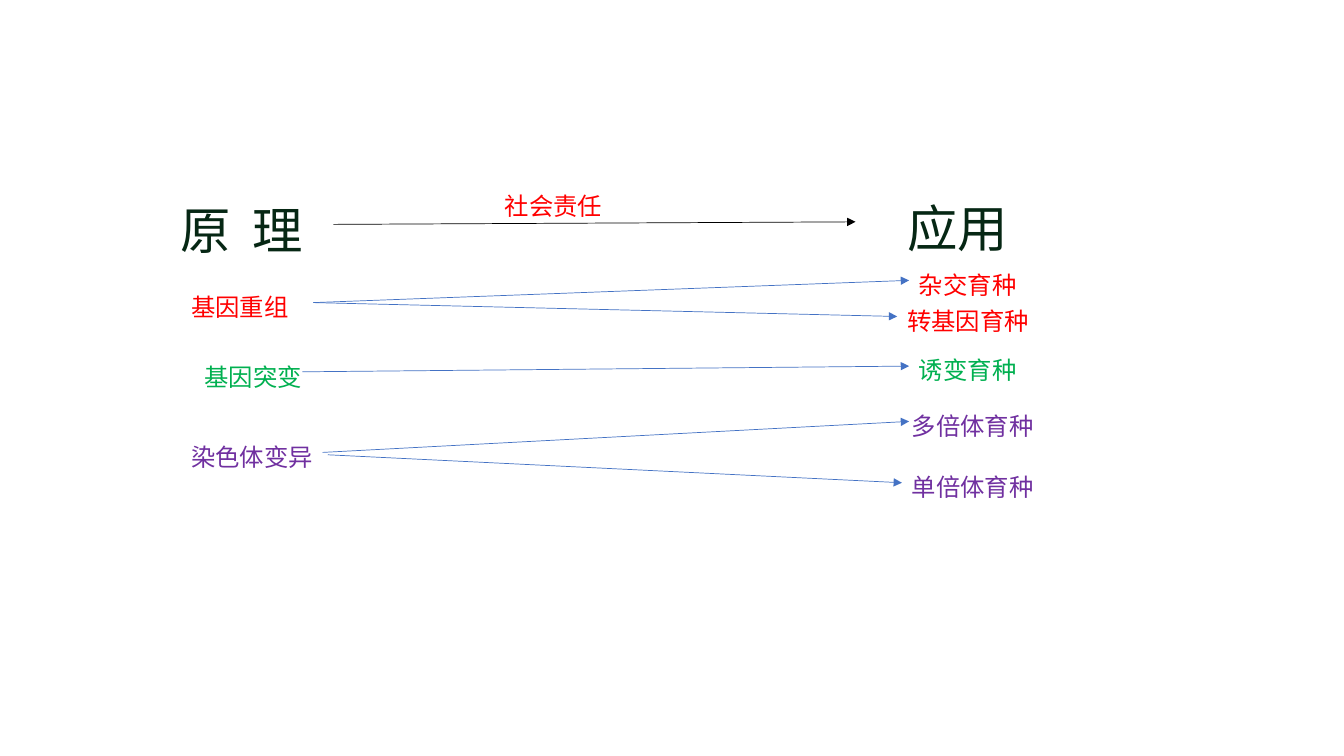
from dataclasses import dataclass

from lxml.etree import SubElement
from pptx import Presentation
from pptx.dml.color import RGBColor
from pptx.enum.shapes import MSO_CONNECTOR
from pptx.enum.text import MSO_AUTO_SIZE
from pptx.oxml.ns import qn
from pptx.shapes.autoshape import Shape
from pptx.slide import Slide
from pptx.util import Cm, Pt

DARK_GREEN = RGBColor(0x06, 0x27, 0x14)
RED = RGBColor(0xFF, 0x00, 0x00)
GREEN = RGBColor(0x00, 0xB0, 0x50)
PURPLE = RGBColor(0x70, 0x30, 0xA0)
BLACK = RGBColor(0x00, 0x00, 0x00)
BLUE = RGBColor(0x44, 0x72, 0xC4)

FONT = "Noto Sans CJK SC"
LEFT_SIDE, RIGHT_SIDE = 1, 3


@dataclass(frozen=True)
class Label:
    text: str
    left: float
    top: float
    width: float = 3.61
    height: float = 1.07
    color: RGBColor = RED
    size: float = 17.4
    spacing: int = 0  # hundredths of a point between letters


@dataclass(frozen=True)
class Arrow:
    """An end is the text of the label it joins, or a free point in cm."""
    start: str | tuple[float, float]
    end: str | tuple[float, float]
    color: RGBColor = BLUE


HEADING = {"width": 4.11, "height": 2.11, "color": DARK_GREEN, "size": 36}

LABELS = [
    Label("原 理", 4.29, 4.6, spacing=400, **HEADING),
    Label("应用", 22.61, 4.55, **HEADING),
    Label("社会责任", 12.47, 4.55, height=1.14),
    Label("杂交育种", 22.91, 6.53),
    Label("诱变育种", 22.91, 8.69, color=GREEN),
    Label("转基因育种", 22.61, 7.44),
    Label("多倍体育种", 22.73, 10.08, color=PURPLE),
    Label("单倍体育种", 22.73, 11.63, color=PURPLE),
    Label("基因突变", 4.9, 8.86, width=9.73, color=GREEN),
    Label("基因重组", 4.57, 7.09, width=3.33),
    Label("染色体变异", 4.57, 10.87, width=4.01, color=PURPLE),
]

ARROWS = [
    Arrow("原 理", (21.56, 5.59), BLACK),
    Arrow("基因重组", "杂交育种"),
    Arrow("基因重组", "转基因育种"),
    Arrow((7.62, 9.37), "诱变育种"),
    Arrow((8.13, 11.4), (22.91, 10.62)),
    Arrow((8.26, 11.46), "单倍体育种"),
]


def add_label(slide: Slide, label: Label) -> Shape:
    box = slide.shapes.add_textbox(
        Cm(label.left), Cm(label.top), Cm(label.width), Cm(label.height))
    frame = box.text_frame
    frame.word_wrap = True
    frame.auto_size = MSO_AUTO_SIZE.SHAPE_TO_FIT_TEXT
    paragraph = frame.paragraphs[0]
    paragraph.line_spacing = 1.2
    run = paragraph.add_run()
    run.text = label.text
    for attribute, value in {"name": FONT, "size": Pt(label.size)}.items():
        setattr(run.font, attribute, value)
    run.font.color.rgb = label.color
    properties = run._r.get_or_add_rPr()
    SubElement(properties, qn("a:ea"), typeface=FONT)
    if label.spacing:
        properties.set("spc", str(label.spacing))
    return box


def add_arrow(slide: Slide, arrow: Arrow, boxes: dict[str, Shape]) -> None:
    connector = slide.shapes.add_connector(MSO_CONNECTOR.STRAIGHT, 0, 0, 0, 0)
    if isinstance(arrow.start, str):
        connector.begin_connect(boxes[arrow.start], RIGHT_SIDE)
    else:
        connector.begin_x, connector.begin_y = map(Cm, arrow.start)
    if isinstance(arrow.end, str):
        connector.end_connect(boxes[arrow.end], LEFT_SIDE)
    else:
        connector.end_x, connector.end_y = map(Cm, arrow.end)
    connector.line.width = Pt(0.5)
    connector.line.color.rgb = arrow.color
    SubElement(connector.line._get_or_add_ln(), qn("a:tailEnd"), type="triangle")
    SubElement(connector._element.spPr, qn("a:effectLst"))


def main() -> None:
    presentation = Presentation()
    presentation.slide_width = Cm(33.87)
    presentation.slide_height = Cm(19.05)
    slide = presentation.slides.add_slide(presentation.slide_layouts[6])
    boxes = {label.text: add_label(slide, label) for label in LABELS}
    for arrow in ARROWS:
        add_arrow(slide, arrow, boxes)
    presentation.save("out.pptx")


if __name__ == "__main__":
    main()
